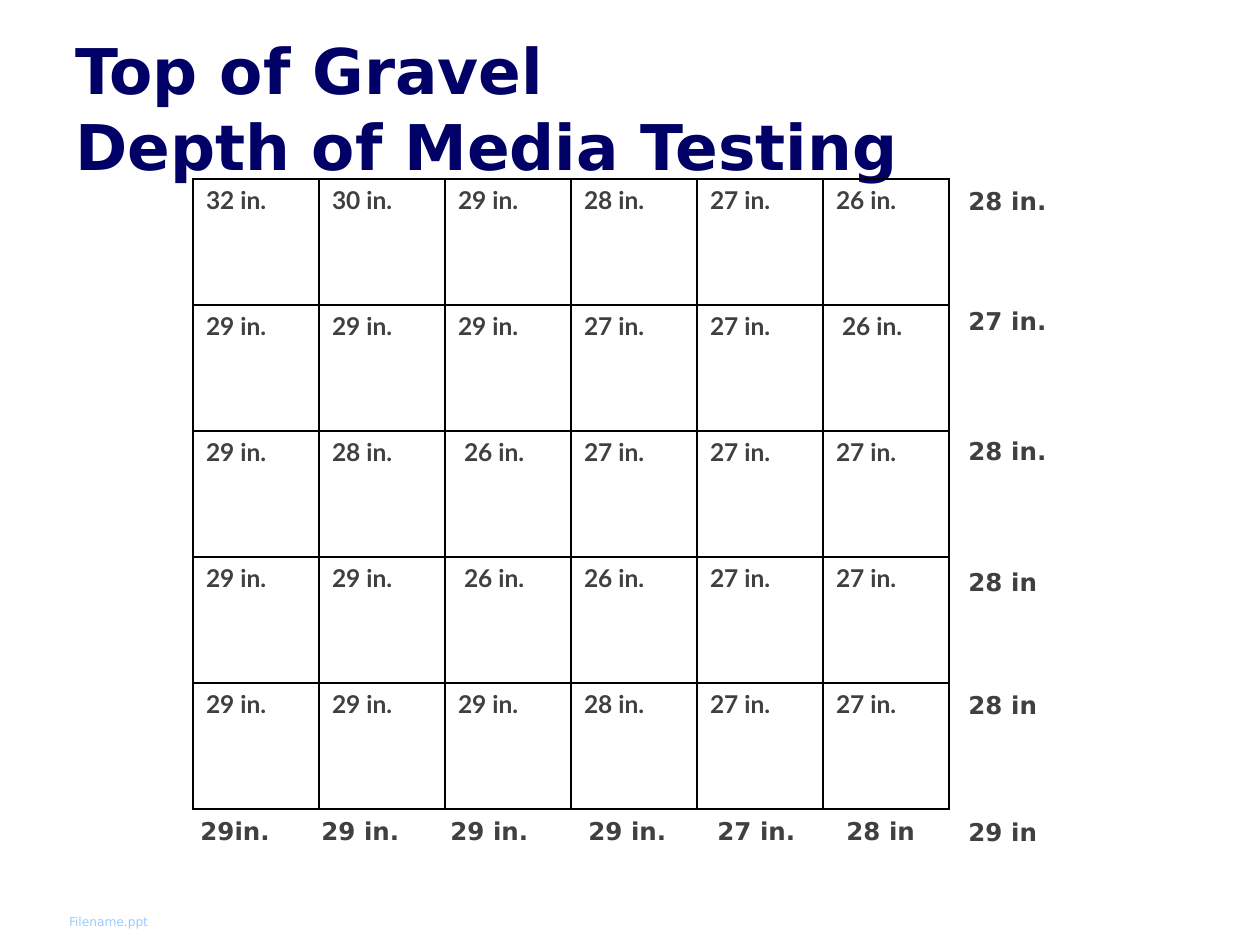
from lxml.etree import SubElement
from pptx import Presentation
from pptx.dml.color import RGBColor
from pptx.enum.text import MSO_ANCHOR, MSO_AUTO_SIZE, PP_ALIGN
from pptx.oxml.ns import qn
from pptx.util import Emu, Pt

SCALE = 914400 / 126
SANS = "DejaVu Sans"
GREY = "404040"
CELL = 126
DEPTHS = [
    [32, 30, 29, 28, 27, 26],
    [29, 29, 29, 27, 27, 26],
    [29, 28, 26, 27, 27, 27],
    [29, 29, 26, 26, 27, 27],
    [29, 29, 29, 28, 27, 27],
]
SHIFTED = {(1, 5), (2, 2), (3, 2)}
SIDE = [("28 in.", 0), ("27 in.", 90), ("28 in.", 101),
        ("28 in", 102), ("28 in", 93), ("29 in", 98)]
BASE = ["29in.", "29 in.", "29 in.", "29 in.", "27 in.", "28 in"]
STOPS = [121, 250, 388, 517, 646]


def px(n):
    return Emu(round(n * SCALE))


def color(code):
    return RGBColor.from_string(code)


def style(para, size, code, name=SANS, bold=True):
    font = para.font
    font.size, font.name, font.bold = Pt(size), name, bold
    font.color.rgb = color(code)


def text_box(slide, box, wrap=False):
    frame = slide.shapes.add_textbox(*map(px, box)).text_frame
    frame.word_wrap = wrap
    return frame


def add_title(slide, box):
    title = slide.shapes.title
    title.left, title.top, title.width, title.height = map(px, box)
    frame = title.text_frame
    frame.auto_size = MSO_AUTO_SIZE.NONE
    frame.vertical_anchor = MSO_ANCHOR.TOP
    frame.margin_left = frame.margin_right = px(13)
    frame.margin_top = px(8)
    para = frame.paragraphs[0]
    para.add_run().text = "Top of Gravel"
    para.add_line_break()
    para.add_run().text = "Depth of Media Testing"
    para.alignment = PP_ALIGN.LEFT
    para.line_spacing = Pt(43.5)
    style(para, 36, "000066")


def add_edges(cell):
    props = cell._tc.get_or_add_tcPr()
    for n, side in enumerate(("lnL", "lnR", "lnT", "lnB")):
        line = props.makeelement(qn("a:" + side), {"w": str(Pt(1))})
        fill = SubElement(line, qn("a:solidFill"))
        SubElement(fill, qn("a:srgbClr"), val="000000")
        props.insert(n, line)


def add_grid(slide, left, top):
    rows, cols = len(DEPTHS), len(DEPTHS[0])
    box = (left, top, cols * CELL, rows * CELL)
    table = slide.shapes.add_table(rows, cols, *map(px, box)).table
    table.first_row = table.horz_banding = False
    for r, row in enumerate(DEPTHS):
        for c, depth in enumerate(row):
            cell = table.cell(r, c)
            cell.text = f"{depth} in."
            cell.margin_left = px(19 if (r, c) in SHIFTED else 13)
            cell.fill.background()
            style(cell.text_frame.paragraphs[0], 14, GREY, "Lato")
            add_edges(cell)


def add_side(slide, box):
    frame = text_box(slide, box)
    for n, (label, gap) in enumerate(SIDE):
        para = frame.add_paragraph() if n else frame.paragraphs[0]
        para.text = label
        para.space_before = px(gap)
        style(para, 14, GREY)


def add_base(slide, box):
    para = text_box(slide, box).paragraphs[0]
    para.text = "\t".join(BASE)
    style(para, 14, GREY)
    props = para._p.get_or_add_pPr()
    tabs = props.makeelement(qn("a:tabLst"), {})
    for stop in STOPS:
        SubElement(tabs, qn("a:tab"), pos=str(px(stop)), algn="l")
    props.find(qn("a:defRPr")).addprevious(tabs)


def add_foot(slide, box):
    frame = text_box(slide, box, True)
    frame.vertical_anchor = MSO_ANCHOR.BOTTOM
    frame.margin_left = frame.margin_right = px(6)
    frame.margin_top = frame.margin_bottom = px(6)
    para = frame.paragraphs[0]
    para.text = "Filename.ppt"
    style(para, 7, "99CCFF", bold=False)


def main():
    deck = Presentation()
    deck.slide_width, deck.slide_height = px(1260), px(945)
    slide = deck.slides.add_slide(deck.slide_layouts[5])
    add_foot(slide, (63, 907, 336, 28))
    add_title(slide, (62, 23, 1134, 105))
    add_grid(slide, 193, 179)
    add_side(slide, (956, 180, 105, 704))
    add_base(slide, (188, 810, 757, 43))
    deck.save("out.pptx")


if __name__ == "__main__":
    main()
